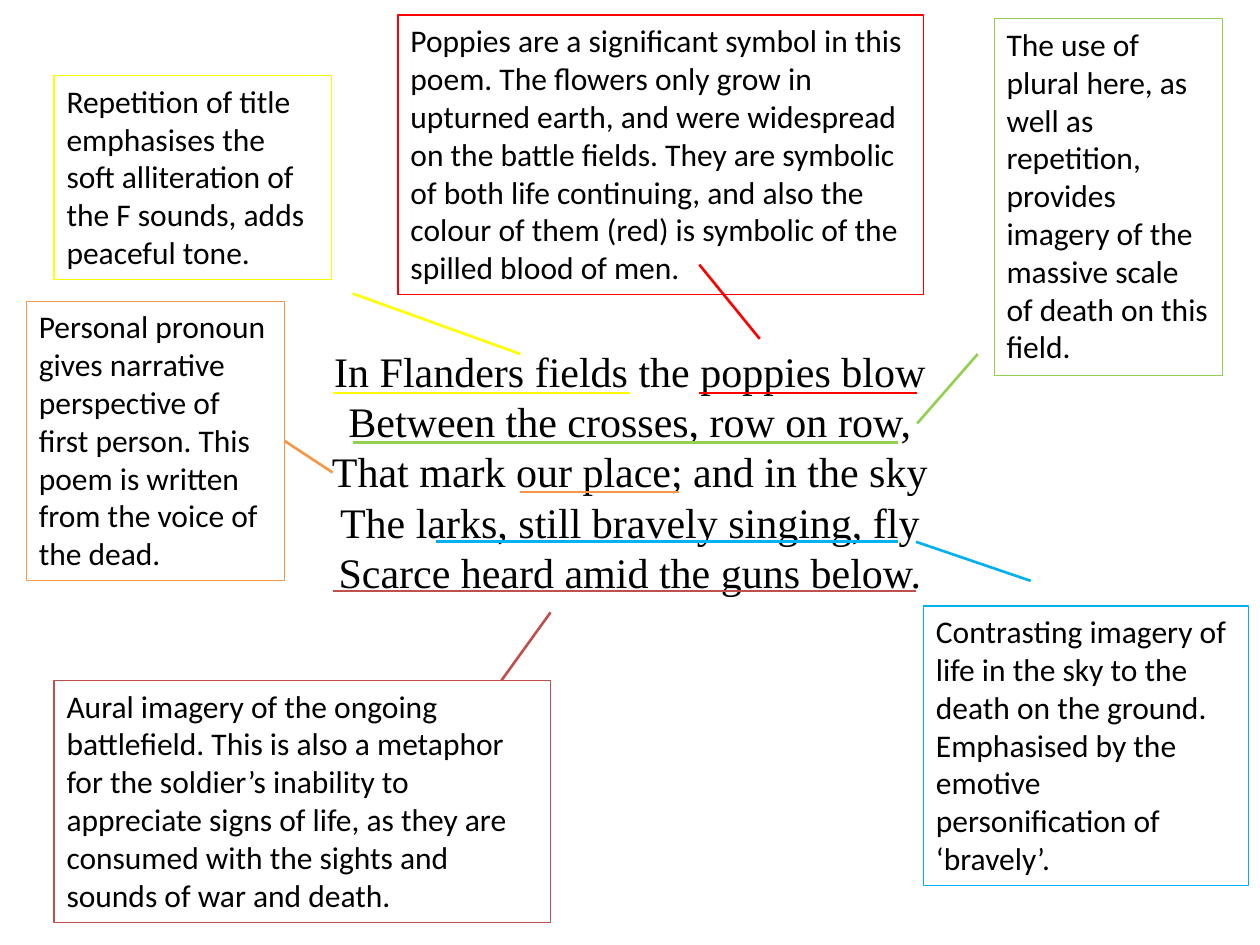
from dataclasses import dataclass

from lxml.etree import SubElement
from pptx import Presentation
from pptx.dml.color import RGBColor
from pptx.enum.shapes import MSO_CONNECTOR as Connector, MSO_SHAPE as Preset
from pptx.enum.text import MSO_ANCHOR as Anchor, MSO_AUTO_SIZE as AutoSize, PP_ALIGN as Align
from pptx.oxml.ns import qn
from pptx.util import Inches, Pt


@dataclass(frozen=True)
class Theme:
    """Colours, fonts, type sizes and line widths."""
    text: str = "000000"
    yellow: str = "FFFF00"
    red: str = "FF0000"
    green: str = "92D050"
    orange: str = "F79646"
    blue: str = "00B0F0"
    brick: str = "C0504D"
    note_font: str = "Calibri"
    note_size: int = 18
    poem_font: str = "Times New Roman"
    poem_size: int = 24
    border: float = 0.75
    stroke: float = 1.5


THEME = Theme()
COLUMNS, ROWS = 100, 75
FIRST_UNDERLINE, VERSE_PITCH = 31.2, 3.93
RIGHT_SIDE = 3

POEM = (
    "In Flanders fields the poppies blow",
    "Between the crosses, row on row,",
    "That mark our place; and in the sky",
    "The larks, still bravely singing, fly",
    "Scarce heard amid the guns below.",
)

ANNOTATIONS = (
    dict(color=THEME.yellow, verse=0, span=(26.4, 50), pointer=(28, 23.3, 41.3, 28.1),
         box=(4.3, 6, 22, 16.2),
         note="Repetition of title emphasises the soft alliteration of the F sounds, "
              "adds peaceful tone."),
    dict(color=THEME.red, verse=0, span=(55.5, 72.8), pointer=(60.3, 26.9, 55.5, 21),
         box=(31.6, 1.2, 41.7, 22.2),
         note="Poppies are a significant symbol in this poem. The flowers only grow in "
              "upturned earth, and were widespread on the battle fields. They are symbolic "
              "of both life continuing, and also the colour of them (red) is symbolic of "
              "the spilled blood of men."),
    dict(color=THEME.green, verse=1, span=(28, 71.3), pointer=(72.8, 33.6, 77.6, 28.1),
         box=(78.9, 1.5, 18.1, 28.3),
         note="The use of plural here, as well as repetition, provides imagery of the "
              "massive scale of death on this field."),
    dict(color=THEME.orange, verse=2, span=(41.3, 53.9), pointer=(22.6, 35, 26.4, 37.5),
         box=(2.1, 23.9, 20.5, 22.2), joined_side=RIGHT_SIDE,
         note="Personal pronoun gives narrative perspective of first person. This poem is "
              "written from the voice of the dead."),
    dict(color=THEME.blue, verse=3, span=(34.6, 71.3), pointer=(72.7, 43, 81.8, 46.1),
         box=(73.3, 48.1, 25.8, 22.2),
         note="Contrasting imagery of life in the sky to the death on the ground. "
              "Emphasised by the emotive personification of ‘bravely’."),
    dict(color=THEME.brick, verse=4, span=(26.4, 72.7), pointer=(43.7, 48.6, 39.8, 54),
         box=(4.3, 54, 39.4, 19.2),
         note="Aural imagery of the ongoing battlefield. This is also a metaphor for the "
              "soldier’s inability to appreciate signs of life, as they are consumed with "
              "the sights and sounds of war and death."),
)


class AnnotatedPoem:
    """Draws a poem with its underlines, pointers and notes."""

    def __init__(self, presentation, theme):
        """Add a blank slide and keep the style."""
        self.theme = theme
        self.width, self.height = presentation.slide_width, presentation.slide_height
        self.slide = presentation.slides.add_slide(presentation.slide_layouts[6])

    def place(self, *lengths):
        """Turn alternating columns and rows into slide lengths."""
        units = (self.width / COLUMNS, self.height / ROWS)
        return [round(length * units[index % 2]) for index, length in enumerate(lengths)]

    def set_text(self, shape, text, font, size, align):
        """Fill a shape with one paragraph of text."""
        frame = shape.text_frame
        frame_format = dict(word_wrap=True, auto_size=AutoSize.SHAPE_TO_FIT_TEXT,
                            vertical_anchor=Anchor.TOP)
        for name, value in frame_format.items():
            setattr(frame, name, value)
        paragraph = frame.paragraphs[0]
        paragraph.text, paragraph.alignment = text, align
        for run in paragraph.runs:
            for name, value in dict(name=font, size=Pt(size)).items():
                setattr(run.font, name, value)
            run.font.color.rgb = RGBColor.from_string(self.theme.text)

    def poem(self, verses, box):
        """Add the centred verses, parted by line breaks."""
        shape = self.slide.shapes.add_textbox(*self.place(*box))
        self.set_text(shape, "\v".join(verses), self.theme.poem_font,
                      self.theme.poem_size, Align.CENTER)

    def line(self, color, ends):
        """Add a straight coloured line."""
        connector = self.slide.shapes.add_connector(Connector.STRAIGHT, *self.place(*ends))
        connector.line.color.rgb = RGBColor.from_string(color)
        connector.line.width = Pt(self.theme.stroke)
        SubElement(connector.element.spPr, qn("a:effectLst"))
        return connector

    def note(self, color, box, text):
        """Add an outlined note."""
        shape = self.slide.shapes.add_shape(Preset.RECTANGLE, *self.place(*box))
        shape.shadow.inherit = False
        shape.fill.background()
        shape.line.color.rgb = RGBColor.from_string(color)
        shape.line.width = Pt(self.theme.border)
        self.set_text(shape, text, self.theme.note_font, self.theme.note_size, Align.LEFT)
        return shape

    def annotation(self, color, verse, span, pointer, box, note, joined_side=None):
        """Underline part of a verse and point to its note."""
        level = FIRST_UNDERLINE + verse * VERSE_PITCH
        self.line(color, (span[0], level, span[1], level))
        pointer_line = self.line(color, pointer)
        note_box = self.note(color, box, note)
        if joined_side is not None:
            pointer_line.begin_connect(note_box, joined_side)


def main():
    """Build and save the slide."""
    presentation = Presentation()
    presentation.slide_width, presentation.slide_height = Inches(10), Inches(7.5)
    page = AnnotatedPoem(presentation, THEME)
    page.poem(POEM, (25, 26.9, 50, 21.2))
    for annotation in ANNOTATIONS:
        page.annotation(**annotation)
    presentation.save("out.pptx")


if __name__ == "__main__":
    main()
